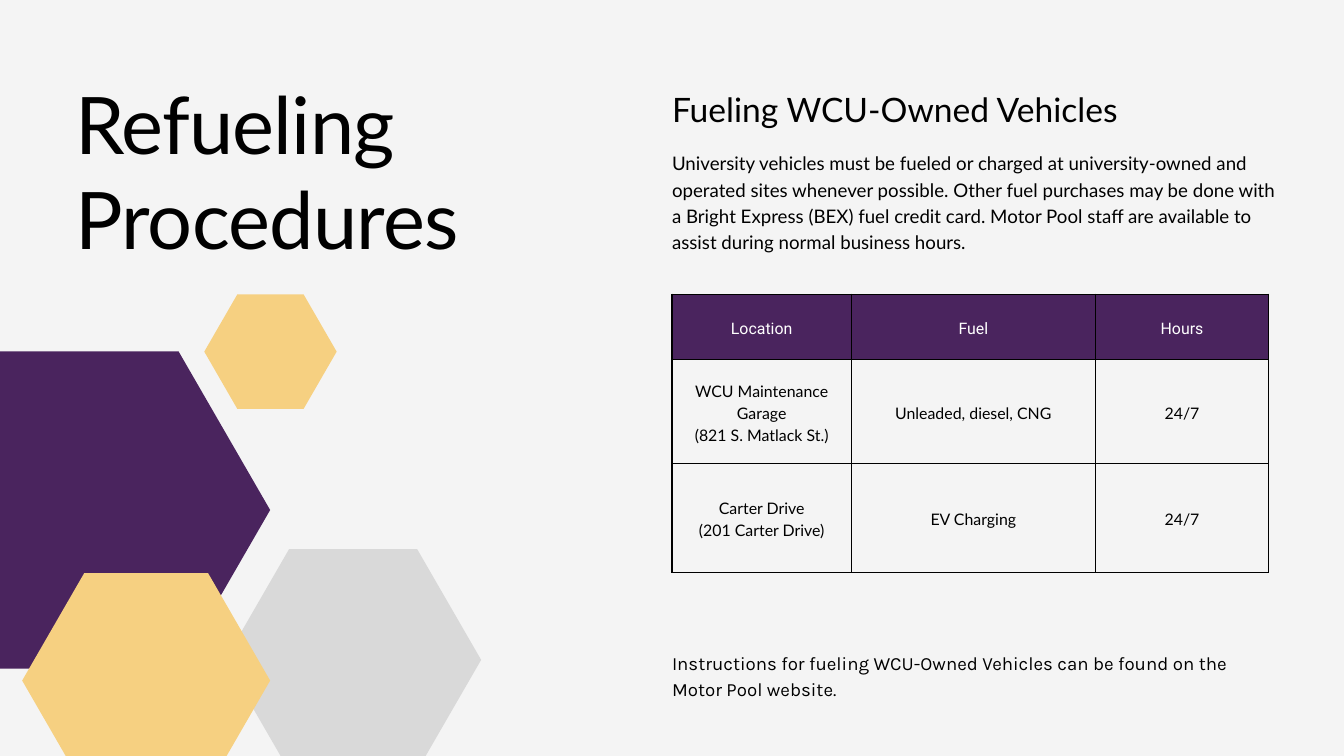
"""Build the refueling procedures slide."""
import math

import pptx
import pptx.dml.color
import pptx.enum.shapes
import pptx.enum.text
import pptx.oxml
import pptx.oxml.ns
import pptx.util

Inches = pptx.util.Inches
Pt = pptx.util.Pt
ALIGN = pptx.enum.text.PP_ALIGN
ANCHOR = pptx.enum.text.MSO_ANCHOR

COLORS = {
    "background": "F4F4F4",
    "purple": "4A245E",
    "gray": "D9D9D9",
    "gold": "F6D081",
    "black": "000000",
    "white": "FFFFFF",
}

TITLE = "Refueling Procedures"
TITLE_BOX = (1.12, 1.12, 6.03, 2.81)
TITLE_STYLE = {"size": 85, "name": "Lato", "spacing": 102}

RIGHT_LEFT, RIGHT_WIDTH = 10, 9.05
RIGHT_TEXTS = [
    (1.32, 0.6, "Fueling WCU-Owned Vehicles",
     {"size": 36, "name": "Lato", "spacing": 43.2}),
    (2.21, 1.53,
     "University vehicles must be fueled or charged at university-owned and "
     "operated sites whenever possible. Other fuel purchases may be done with "
     "a Bright Express (BEX) fuel credit card. Motor Pool staff are available "
     "to assist during normal business hours.",
     {"size": 20, "name": "Lato", "spacing": 28}),
    (9.64, 0.75,
     "Instructions for fueling WCU-Owned Vehicles can be found on the "
     "Motor Pool website.",
     {"size": 20, "name": "Karla", "spacing": 28}),
]

HEXAGONS = [
    (-1.43, 5.23, 5.45, "purple"),
    (3.35, 8.17, 3.81, "gray"),
    (3.04, 4.38, 1.97, "gold"),
    (0.33, 8.53, 3.69, "gold"),
]
HEXAGON_RATIO = math.sqrt(3) / 2

TABLE_TOP = 4.38
COLUMN_WIDTHS = [2.67, 3.63, 2.58]
ROW_HEIGHTS = [0.97, 1.55, 1.62]
TABLE_ROWS = [
    ["Location", "Fuel", "Hours"],
    ["WCU Maintenance Garage\n(821 S. Matlack St.)", "Unleaded, diesel, CNG", "24/7"],
    ["Carter Drive\n(201 Carter Drive)", "EV Charging", "24/7"],
]
HEADER_STYLE = {"size": 17, "name": "Roboto", "spacing": 23.8, "color": "white",
                "align": ALIGN.CENTER}
BODY_STYLE = {**HEADER_STYLE, "name": "Lato", "color": "black"}
CELL_FORMAT = {
    "vertical_anchor": ANCHOR.MIDDLE,
    **{f"margin_{side}": Inches(0.21) for side in ("left", "right", "top", "bottom")},
}
FRAME_FORMAT = {
    "word_wrap": True,
    "auto_size": pptx.enum.text.MSO_AUTO_SIZE.NONE,
    "vertical_anchor": ANCHOR.TOP,
    **{f"margin_{side}": 0 for side in ("left", "right", "top", "bottom")},
}


def rgb(name):
    return pptx.dml.color.RGBColor.from_string(COLORS[name])


def set_attributes(target, values):
    for name, value in values.items():
        setattr(target, name, value)


def write(text_frame, text, style):
    text_frame.text = text
    for paragraph in text_frame.paragraphs:
        set_attributes(paragraph, {
            "alignment": style.get("align", ALIGN.LEFT),
            "line_spacing": Pt(style["spacing"]),
            "space_before": Pt(0),
        })
        for run in paragraph.runs:
            set_attributes(run.font, {
                "size": Pt(style["size"]), "name": style["name"], "bold": False})
            run.font.color.rgb = rgb(style.get("color", "black"))


def add_hexagon(slide, left, top, width, color):
    hexagon = slide.shapes.add_shape(
        pptx.enum.shapes.MSO_SHAPE.HEXAGON,
        Inches(left), Inches(top), Inches(width), Inches(width * HEXAGON_RATIO))
    hexagon.adjustments[0] = 0.25 / HEXAGON_RATIO
    hexagon.shadow.inherit = False
    hexagon.fill.solid()
    hexagon.fill.fore_color.rgb = rgb(color)
    hexagon.line.fill.background()


def add_borders(cell):
    properties = cell._tc.get_or_add_tcPr()
    for side in "LRTB":
        properties.append(pptx.oxml.parse_xml(
            f'<a:ln{side} {pptx.oxml.ns.nsdecls("a")} w="{Pt(1.5)}"><a:solidFill>'
            f'<a:srgbClr val="{COLORS["black"]}"/></a:solidFill></a:ln{side}>'))


def add_locations_table(slide):
    table = slide.shapes.add_table(
        len(ROW_HEIGHTS), len(COLUMN_WIDTHS), Inches(RIGHT_LEFT), Inches(TABLE_TOP),
        Inches(sum(COLUMN_WIDTHS)), Inches(sum(ROW_HEIGHTS))).table
    set_attributes(table, {"first_row": False, "horz_banding": False})
    for column, width in zip(table.columns, COLUMN_WIDTHS):
        column.width = Inches(width)
    for row_index, (row, height, texts) in enumerate(
            zip(table.rows, ROW_HEIGHTS, TABLE_ROWS)):
        row.height = Inches(height)
        for cell, text in zip(row.cells, texts):
            set_attributes(cell, CELL_FORMAT)
            add_borders(cell)
            if row_index == 0:
                cell.fill.solid()
                cell.fill.fore_color.rgb = rgb("purple")
            else:
                cell.fill.background()
            write(cell.text_frame, text, BODY_STYLE if row_index else HEADER_STYLE)


def place_title(slide):
    title = slide.shapes.title
    left, top, width, height = map(Inches, TITLE_BOX)
    set_attributes(title, {"left": left, "top": top, "width": width, "height": height})
    set_attributes(title.text_frame, FRAME_FORMAT)
    write(title.text_frame, TITLE, TITLE_STYLE)
    run = title.text_frame.paragraphs[0].runs[0]
    run._r.get_or_add_rPr().set("spc", "-80")


def main():
    presentation = pptx.Presentation()
    set_attributes(presentation, {
        "slide_width": Inches(20), "slide_height": Inches(11.25)})
    slide = presentation.slides.add_slide(presentation.slide_layouts[5])
    slide.background.fill.solid()
    slide.background.fill.fore_color.rgb = rgb("background")
    place_title(slide)
    for hexagon in HEXAGONS:
        add_hexagon(slide, *hexagon)
    add_locations_table(slide)
    for top, height, text, style in RIGHT_TEXTS:
        box = slide.shapes.add_textbox(
            Inches(RIGHT_LEFT), Inches(top), Inches(RIGHT_WIDTH), Inches(height))
        set_attributes(box.text_frame, FRAME_FORMAT)
        write(box.text_frame, text, style)
    presentation.save("out.pptx")


if __name__ == "__main__":
    main()
